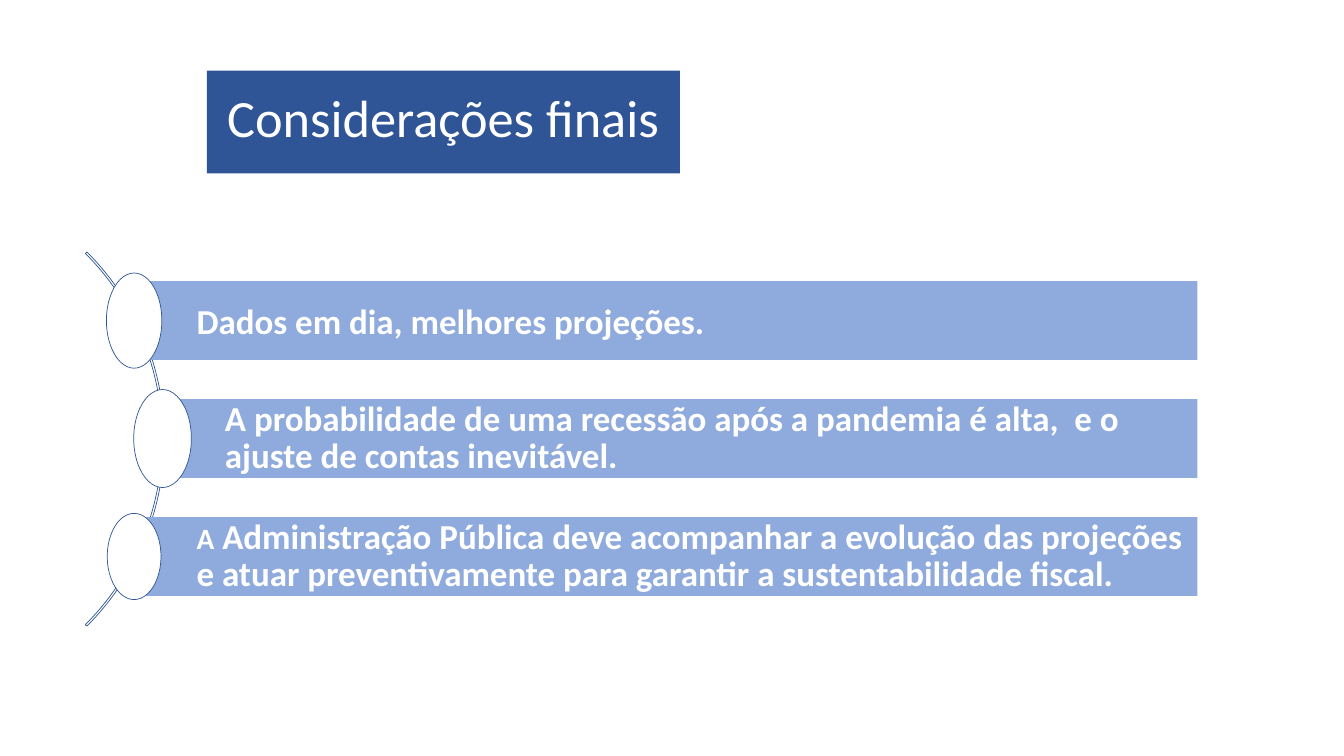
from pptx import Presentation
from pptx.dml.color import RGBColor
from pptx.enum.shapes import MSO_SHAPE as Shape
from pptx.enum.text import MSO_ANCHOR as Anchor, MSO_AUTO_SIZE as AutoSize, PP_ALIGN as Align
from pptx.util import Pt

WHITE = RGBColor(0xFF, 0xFF, 0xFF)
NAVY = RGBColor(0x2F, 0x55, 0x97)
LIGHT_BLUE = RGBColor(0x8F, 0xAA, 0xDC)

BAR_TOP, BAR_PITCH, BAR_HEIGHT, BAR_RIGHT = 200.9, 84.25, 56.2, 855.3
TEXT_INDENT = 44.6


def add_outlined(shape_type, left, top, width, height):
    shape = slide.shapes.add_shape(shape_type, Pt(left), Pt(top), Pt(width), Pt(height))
    shape.shadow.inherit = False
    shape.fill.solid()
    shape.fill.fore_color.rgb = WHITE
    shape.line.color.rgb = NAVY
    shape.line.width = Pt(0.5)
    return shape


def add_run(paragraph, text, size, bold):
    run = paragraph.add_run()
    run.text = text
    run.font.name = "Calibri"
    run.font.size = Pt(size)
    run.font.bold = bold
    run.font.color.rgb = WHITE


prs = Presentation()
prs.slide_width, prs.slide_height = Pt(960), Pt(540)
slide = prs.slides.add_slide(prs.slide_layouts[5])

title = slide.shapes.title
title.left, title.top, title.width, title.height = Pt(147.7), Pt(50.5), Pt(338), Pt(73.4)
title.fill.solid()
title.fill.fore_color.rgb = NAVY
heading = title.text_frame
heading.auto_size = AutoSize.NONE
heading.word_wrap = True
heading.vertical_anchor = Anchor.MIDDLE
heading.paragraphs[0].alignment = Align.CENTER
heading.paragraphs[0].line_spacing = 0.8
add_run(heading.paragraphs[0], "Considerações finais", 37.4, False)

arc = add_outlined(Shape.BLOCK_ARC, -260.6, 124.6, 378, 378)
arc.fill.background()
# Angles are in 100000ths of 1/60000 degree: 315° to 45°
arc.adjustments[0] = 189
arc.adjustments[1] = 27
arc.adjustments[2] = 0.004

# Bar left, line spacing, marker width and height, text runs with their sizes
conclusions = [
    (95.8, 1.0, 39.6, 68, [("Dados em dia, melhores projeções.", 25)]),
    (116.1, 0.9, 41.2, 70, [
        ("A probabilidade de uma recessão após a pandemia é alta,  e o "
         "ajuste de contas inevitável.", 25)]),
    (95.8, 0.9, 38.4, 61.6, [
        ("A", 21),
        (" Administração Pública deve acompanhar a evolução das projeções "
         "e atuar preventivamente para garantir a sustentabilidade fiscal.", 25)]),
]

for row, (left, spacing, marker_width, marker_height, runs) in enumerate(conclusions):
    top = BAR_TOP + row * BAR_PITCH
    bar = slide.shapes.add_shape(
        Shape.RECTANGLE, Pt(left), Pt(top), Pt(BAR_RIGHT - left), Pt(BAR_HEIGHT))
    bar.shadow.inherit = False
    bar.fill.solid()
    bar.fill.fore_color.rgb = LIGHT_BLUE
    bar.line.fill.background()

    frame = bar.text_frame
    frame.word_wrap = True
    frame.vertical_anchor = Anchor.MIDDLE
    frame.margin_left = Pt(TEXT_INDENT)
    frame.margin_right = frame.margin_top = frame.margin_bottom = Pt(4.5)
    conclusion = frame.paragraphs[0]
    conclusion.alignment = Align.LEFT
    conclusion.line_spacing = spacing
    for text, size in runs:
        add_run(conclusion, text, size, True)

    add_outlined(Shape.OVAL, left - marker_width / 2,
                 top + (BAR_HEIGHT - marker_height) / 2, marker_width, marker_height)

prs.save("out.pptx")
